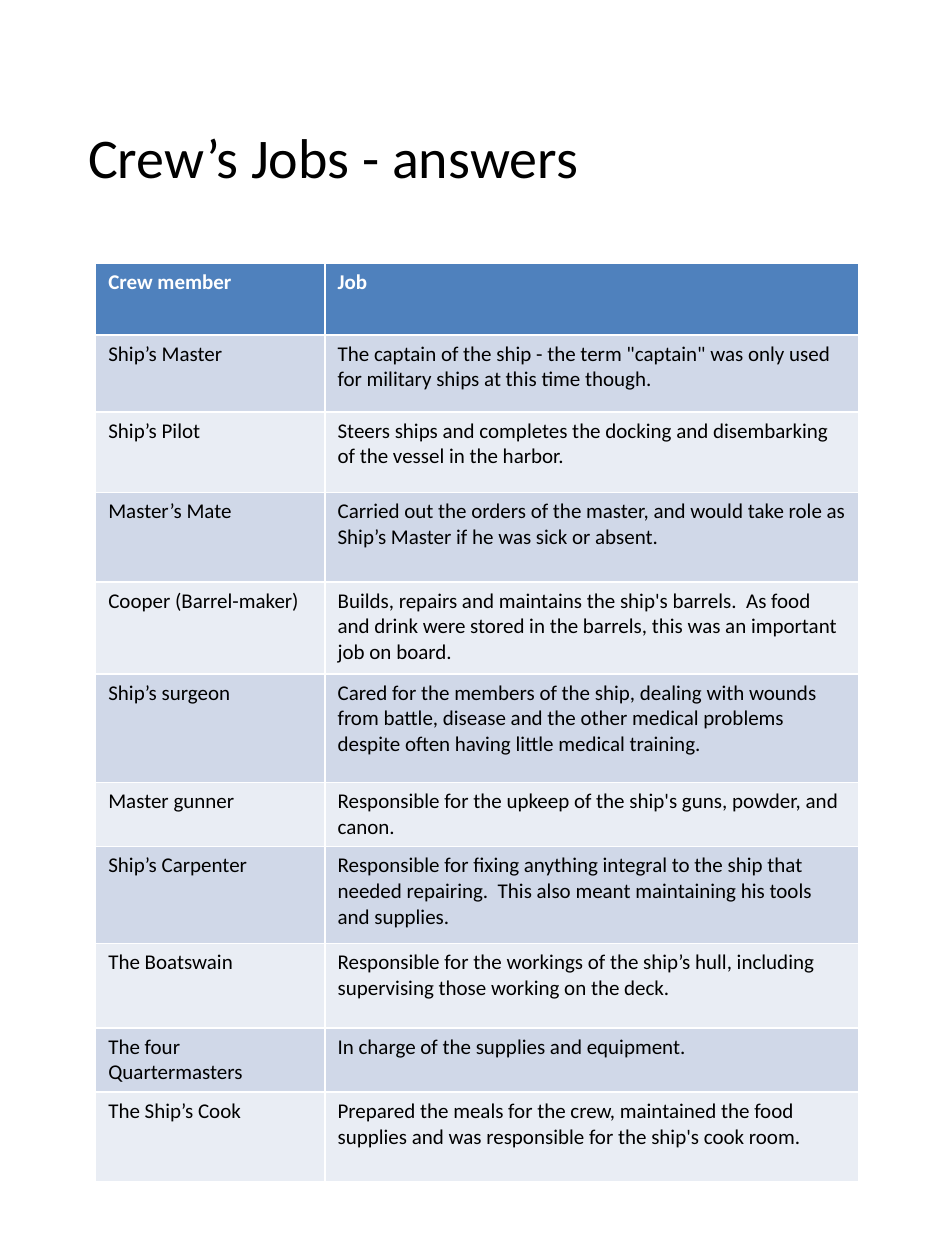
from pptx import Presentation
from pptx.dml.color import RGBColor
from pptx.enum.text import MSO_ANCHOR, PP_ALIGN
from pptx.util import Inches, Pt

MIDDLE = MSO_ANCHOR.MIDDLE
CENTER = PP_ALIGN.CENTER
TITLE_ONLY = 5
FONT = "Calibri"
COLORS = {
    "text": "000000",
    "header_text": "FFFFFF",
    "header": "4F81BD",
    "odd_row": "D0D8E8",
    "even_row": "E9EDF4",
}
COLUMN_WIDTHS = [1.82, 4.24]
HEADER = ("Crew member", "Job", 0.57)
CREW = [
    ("Ship’s Master", "The captain of the ship - the term \"captain\" was only used "
     "for military ships at this time though.", 0.61),
    ("Ship’s Pilot", "Steers ships and completes the docking and disembarking "
     "of the vessel in the harbor.", 0.64),
    ("Master’s Mate", "Carried out the orders of the master, and would take role as "
     "Ship’s Master if he was sick or absent.", 0.71),
    ("Cooper (Barrel-maker)", "Builds, repairs and maintains the ship's barrels.  As food "
     "and drink were stored in the barrels, this was an important job on board.", 0.73),
    ("Ship’s surgeon", "Cared for the members of the ship, dealing with wounds "
     "from battle, disease and the other medical problems "
     "despite often having little medical training.", 0.86),
    ("Master gunner", "Responsible for the upkeep of the ship's guns, powder, and canon.", 0.51),
    ("Ship’s Carpenter", "Responsible for fixing anything integral to the ship that "
     "needed repairing.  This also meant maintaining his tools and supplies.", 0.77),
    ("The Boatswain", "Responsible for the workings of the ship’s hull, including "
     "supervising those working on the deck.", 0.67),
    ("The four Quartermasters", "In charge of the supplies and equipment.", 0.51),
    ("The Ship’s Cook", "Prepared the meals for the crew, maintained the food "
     "supplies and was responsible for the ship's cook room.", 0.71),
]


def rgb(name):
    return RGBColor.from_string(COLORS[name])


def format_text(frame, size, color, bold=False):
    for para in frame.paragraphs:
        for span in para.runs:
            span.font.name = FONT
            span.font.size = Pt(size)
            span.font.bold = bold
            span.font.color.rgb = rgb(color)


def add_title(page, text):
    title = page.shapes.title
    title.left, title.top = Inches(0.36), Inches(0.67)
    title.width, title.height = Inches(4.57), Inches(1.14)
    frame = title.text_frame
    frame.text = text
    frame.vertical_anchor = MIDDLE
    frame.paragraphs[0].alignment = CENTER
    format_text(frame, 32, "text")


def fill_cell(cell, text, fill, color, bold):
    cell.fill.solid()
    cell.fill.fore_color.rgb = rgb(fill)
    cell.text_frame.text = text
    format_text(cell.text_frame, 12, color, bold)


def add_jobs_table(page):
    rows = [HEADER] + CREW
    height = sum(row[-1] for row in rows)
    table = page.shapes.add_table(
        len(rows), len(COLUMN_WIDTHS), Inches(0.76), Inches(2.09),
        Inches(sum(COLUMN_WIDTHS)), Inches(height)).table
    for column, width in zip(table.columns, COLUMN_WIDTHS):
        column.width = Inches(width)
    for index, (member, job, row_height) in enumerate(rows):
        table.rows[index].height = Inches(row_height)
        is_header = index == 0
        band = "odd_row" if index % 2 else "even_row"
        fill = "header" if is_header else band
        color = "header_text" if is_header else "text"
        for cell, text in zip(table.rows[index].cells, (member, job)):
            fill_cell(cell, text, fill, color, is_header)


def main():
    deck = Presentation()
    deck.slide_width, deck.slide_height = Inches(7.5), Inches(10)
    page = deck.slides.add_slide(deck.slide_layouts[TITLE_ONLY])
    add_title(page, "Crew’s Jobs - answers")
    add_jobs_table(page)
    deck.save("out.pptx")


if __name__ == "__main__":
    main()
